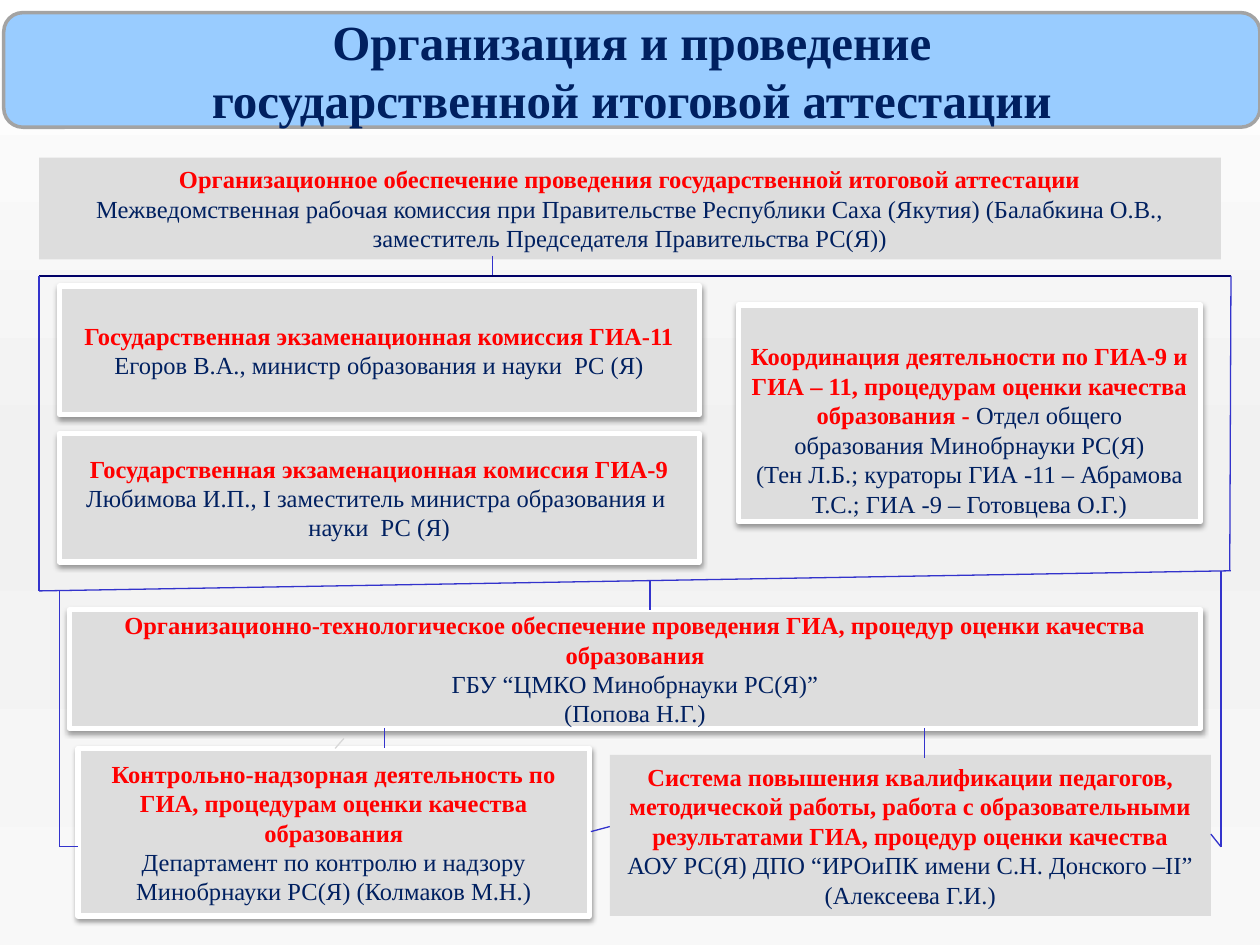
from copy import deepcopy

from lxml.etree import SubElement
from pptx import Presentation
from pptx.dml.color import RGBColor
from pptx.enum.shapes import MSO_CONNECTOR, MSO_SHAPE
from pptx.enum.text import MSO_ANCHOR, PP_ALIGN
from pptx.oxml.ns import qn
from pptx.util import Inches, Pt

NAVY, RED, GREY, BLUE = "002060", "FF0000", "DDDDDD", "3333CC"


def color(value):
    """Turn a hex string into a colour."""
    return RGBColor.from_string(value)


def paint_background(page):
    """Fill the page with a three-stop vertical gradient."""
    fill = page.background.fill
    fill.gradient()
    fill.gradient_angle = 270
    stops = page.element.find(".//" + qn("a:gsLst"))
    stops.insert(1, deepcopy(stops[0]))
    for stop, value, position in zip(fill.gradient_stops, ("FFFFFF", "F1F1F1", "F8F8F8"), (0, 0.5, 1)):
        stop.color.rgb = color(value)
        stop.position = position


def add_panel(page, box, kind, fill, line=None, width=0):
    """Add a filled shape without shadow and return it."""
    shape = page.shapes.add_shape(kind, *map(Inches, box))
    shape.shadow.inherit = False
    shape.fill.solid()
    shape.fill.fore_color.rgb = color(fill)
    if line:
        shape.line.color.rgb = color(line)
        shape.line.width = Pt(width)
    else:
        shape.line.fill.background()
    shape.text_frame.word_wrap = True
    shape.text_frame.vertical_anchor = MSO_ANCHOR.MIDDLE
    return shape


def add_shadow(shape):
    """Give a shape a soft shadow below it."""
    effects = shape._element.spPr.find(qn("a:effectLst"))
    outer = SubElement(effects, qn("a:outerShdw"), blurRad=str(Pt(3.1)), dist=str(Pt(1.6)),
                       dir="5400000", rotWithShape="0")
    tone = SubElement(outer, qn("a:srgbClr"), val="000000")
    SubElement(tone, qn("a:alpha"), val="38000")


def style(para, size, tone, bold):
    """Centre a paragraph and set its font."""
    para.alignment = PP_ALIGN.CENTER
    para.font.name = "Times New Roman"
    para.font.size = Pt(size)
    para.font.bold = bold
    para.font.color.rgb = color(tone)


def add_title(page, box, lines):
    """Add the rounded title banner."""
    frame = add_panel(page, box, MSO_SHAPE.ROUNDED_RECTANGLE, "99CCFF", "A3A3A3", 2).text_frame
    frame.text = "\n".join(lines)
    for para in frame.paragraphs:
        style(para, 28, NAVY, True)


def add_block(page, box, heading, lines, framed=True, lead="", top=0.05):
    """Add a grey block with a red heading and navy lines."""
    border = ("FFFFFF", 3) if framed else ()
    shape = add_panel(page, box, MSO_SHAPE.RECTANGLE, GREY, *border)
    if framed:
        add_shadow(shape)
    frame = shape.text_frame
    frame.margin_top = Inches(top)
    frame.text = "\n".join([heading, *lines])
    for index, para in enumerate(frame.paragraphs):
        style(para, 14, NAVY if index else RED, index == 0)
    if lead:
        span = frame.paragraphs[0].add_run()
        span.text = lead
        span.font.bold = False
        span.font.color.rgb = color(NAVY)


def add_line(page, start, end, tone=BLUE):
    """Draw a thin straight line."""
    line = page.shapes.add_connector(MSO_CONNECTOR.STRAIGHT, *map(Inches, (*start, *end)))
    line.line.color.rgb = color(tone)
    line.line.width = Pt(0.75)
    SubElement(line._element.spPr, qn("a:effectLst"))


def add_commissions(page, box):
    """Add the outlined group of commissions and coordination."""
    left, top, width, height = box
    right, bottom = left + width, top + height
    add_block(page, (left + 0.16, top + 0.08, 5.08, 1.02),
              "Государственная экзаменационная комиссия ГИА-11",
              ["Егоров В.А., министр образования и науки  РС (Я)"])
    add_block(page, (left + 0.16, top + 1.25, 5.08, 1.02),
              "Государственная экзаменационная комиссия ГИА-9",
              ["Любимова И.П., I заместитель министра образования и  науки  РС (Я)"])
    add_block(page, (left + 5.55, top + 0.23, 3.67, 1.72),
              "Координация деятельности по ГИА-9 и ГИА – 11, процедурам оценки качества образования - ",
              ["(Тен Л.Б.; кураторы ГИА -11 – Абрамова Т.С.; ГИА -9 – Готовцева О.Г.)"],
              lead="Отдел общего образования Минобрнауки РС(Я)", top=0.31)
    add_line(page, (left, top), (right, top), "000066")
    add_line(page, (left, top), (left, bottom))
    add_line(page, (right, top), (right - 0.01, bottom - 0.16))
    add_line(page, (left, bottom), (right, bottom - 0.16))


def add_support(page, box):
    """Add the support blocks with the bracket lines around them."""
    left, top, width, height = box
    right, bottom = left + width, top + height
    add_block(page, (left + 0.08, top + 0.31, 8.98, 0.94),
              "Организационно-технологическое обеспечение проведения ГИА, процедур оценки качества образования",
              ["ГБУ “ЦМКО Минобрнауки РС(Я)”", "(Попова Н.Г.)"])
    add_block(page, (left + 0.15, top + 1.41, 4.06, 1.33),
              "Контрольно-надзорная деятельность по ГИА, процедурам оценки качества образования",
              ["Департамент по контролю и надзору Минобрнауки РС(Я) (Колмаков М.Н.)"])
    add_block(page, (left + 4.37, top + 1.46, 4.77, 1.28),
              "Система повышения квалификации педагогов, методической работы, работа с "
              "образовательными результатами ГИА, процедур оценки качества",
              ["АОУ РС(Я) ДПО “ИРОиПК имени С.Н. Донского –II” (Алексеева Г.И.)"], framed=False)
    add_line(page, (left, top + 0.16), (left, bottom))
    add_line(page, (left, bottom), (left + 0.15, bottom))
    add_line(page, (right, top), (right, bottom))
    add_line(page, (right, bottom), (right - 0.08, bottom - 0.1))
    add_line(page, (left + 4.69, top + 0.08), (left + 4.69, top + 0.31))
    add_line(page, (left + 2.58, top + 1.25), (left + 2.58, top + 1.41))
    add_line(page, (left + 6.87, top + 1.25), (left + 6.87, top + 1.49))
    add_line(page, (left + 4.22, top + 2.07), (left + 4.37, top + 2.03))
    add_line(page, (left + 2.26, top + 1.33), (left + 2.19, top + 1.41), "D8D8D8")


def main():
    """Build the slide and save the deck."""
    deck = Presentation()
    deck.slide_width, deck.slide_height = Inches(10), Inches(7.5)
    page = deck.slides.add_slide(deck.slide_layouts[6])
    paint_background(page)
    add_title(page, (0.03, 0.1, 9.97, 0.91),
              ["Организация и проведение", "государственной итоговой аттестации"])
    add_block(page, (0.31, 1.25, 9.38, 0.81),
              "Организационное обеспечение проведения государственной итоговой аттестации",
              ["Межведомственная рабочая комиссия при Правительстве Республики Саха (Якутия) "
               "(Балабкина О.В., заместитель Председателя Правительства РС(Я))"], framed=False)
    add_line(page, (3.91, 2.03), (3.91, 2.19))
    add_commissions(page, (0.31, 2.19, 9.46, 2.5))
    add_support(page, (0.47, 4.53, 9.22, 2.19))
    deck.save("out.pptx")


if __name__ == "__main__":
    main()
